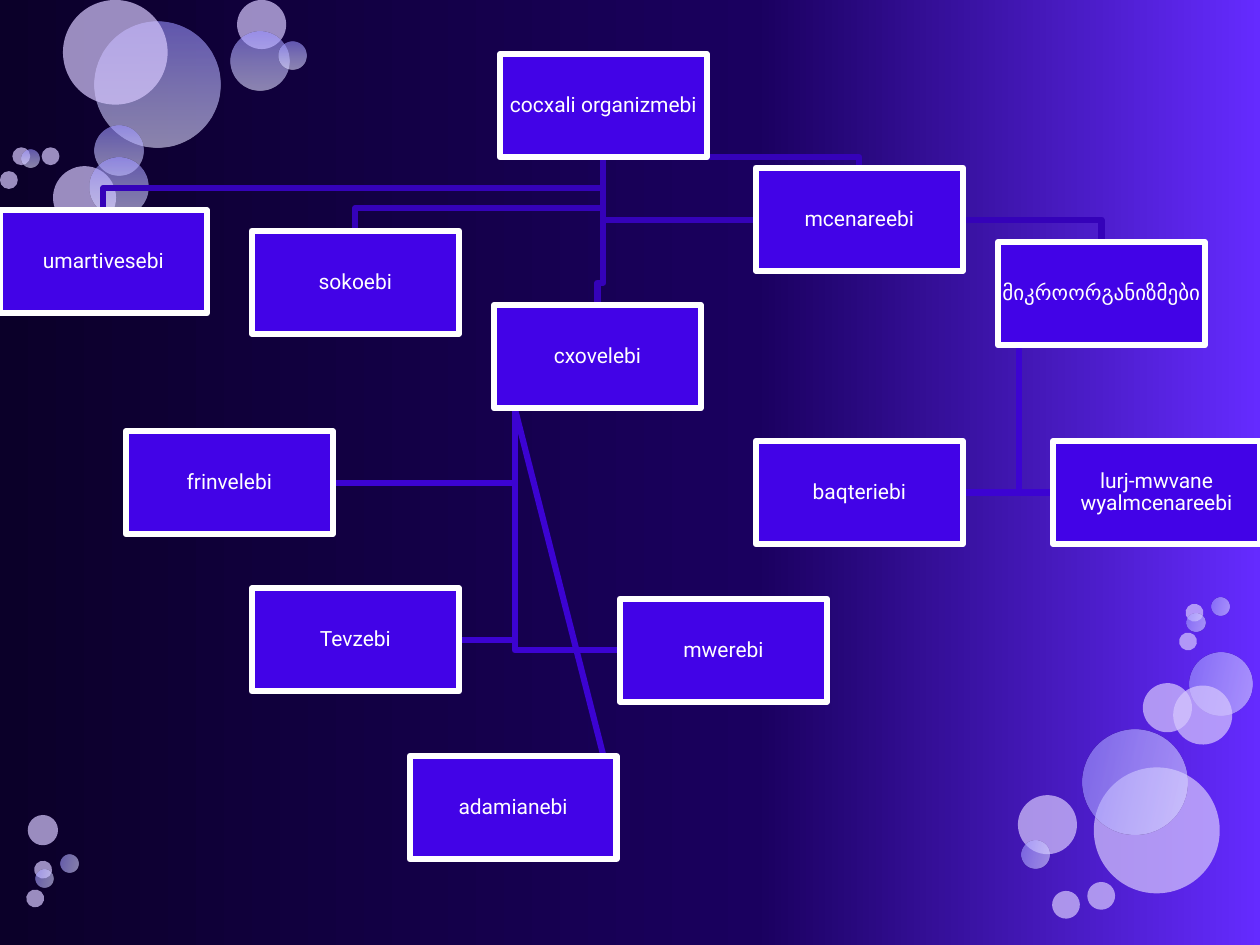
from dataclasses import dataclass

from lxml.etree import SubElement
from pptx import Presentation
from pptx.dml.color import RGBColor
from pptx.enum.shapes import MSO_CONNECTOR, MSO_SHAPE
from pptx.enum.text import MSO_ANCHOR, PP_ALIGN
from pptx.oxml.ns import qn
from pptx.shapes.autoshape import Shape
from pptx.slide import Slide
from pptx.util import Cm, Pt


@dataclass(frozen=True)
class Stop:
    position: int
    color: str
    opacity: int = 100


@dataclass(frozen=True)
class Theme:
    background: tuple = (Stop(0, "0B0029"), Stop(60, "1A005F"), Stop(100, "652BFF"))
    flat_bubble: tuple = (Stop(0, "D7C8FE", 70),)
    glass_bubble: tuple = (Stop(0, "9890FF", 60), Stop(50, "BFBBFF", 60), Stop(100, "E0DEFF", 60))
    box: str = "4203E7"
    white: str = "FFFFFF"
    upper_line: str = "3502B9"
    lower_line: str = "3C03D2"
    line_width: float = 3.5
    text_size: int = 12
    font: str = "Roboto"


@dataclass(frozen=True)
class Bubble:
    left: float
    top: float
    size: float
    glass: bool = False


@dataclass(frozen=True)
class Node:
    text: str
    left: float
    top: float
    font: str = "Roboto"

    @property
    def center(self) -> float:
        return self.left + BOX_WIDTH / 2

    @property
    def middle(self) -> float:
        return self.top + BOX_HEIGHT / 2

    @property
    def bottom(self) -> float:
        return self.top + BOX_HEIGHT

    @property
    def stem(self) -> float:
        """Where the line to side branches leaves the bottom edge."""
        return self.left + BOX_WIDTH / 10


THEME = Theme()
BOX_WIDTH, BOX_HEIGHT = 4.17, 2.08
BEND = 0.45
TILT = 103.3

UPPER_BUBBLES = [
    Bubble(1.91, 0.43, 2.54, True), Bubble(1.07, 3.35, 1.27), Bubble(1.91, 2.54, 0.99, True),
    Bubble(1.8, 3.18, 1.19, True), Bubble(1.27, 0, 2.11), Bubble(4.78, 0, 0.99),
    Bubble(4.65, 0.64, 1.19, True), Bubble(5.61, 0.84, 0.56, True), Bubble(0.25, 2.97, 0.36),
    Bubble(0, 3.45, 0.36), Bubble(0.43, 3.02, 0.36, True), Bubble(0.84, 2.97, 0.36),
]
LOWER_BUBBLES = [
    Bubble(22.05, 15.47, 2.54), Bubble(23.98, 13.16, 1.27, True), Bubble(23.04, 13.77, 0.99),
    Bubble(23.65, 13.82, 1.19), Bubble(21.82, 14.71, 2.11, True), Bubble(0.56, 16.43, 0.61),
    Bubble(20.52, 16.03, 1.19), Bubble(20.6, 16.94, 0.56, True), Bubble(21.21, 17.96, 0.56),
    Bubble(23.9, 12.17, 0.36), Bubble(21.92, 17.78, 0.56), Bubble(24.43, 12.04, 0.36, True),
    Bubble(23.93, 12.37, 0.36, True), Bubble(23.77, 12.75, 0.36), Bubble(0.69, 17.35, 0.36),
    Bubble(1.22, 17.22, 0.36, True), Bubble(0.71, 17.53, 0.36, True), Bubble(0.53, 17.93, 0.36),
]

ORGANISMS = Node("cocxali organizmebi", 10.08, 1.09)
ANIMALS = Node("cxovelebi", 9.96, 6.15)
FISH = Node("Tevzebi", 5.08, 11.86)
BIRDS = Node("frinvelebi", 2.54, 8.69)
INSECTS = Node("mwerebi", 12.5, 12.07)
HUMANS = Node("adamianebi", 8.26, 15.24)
SIMPLEST = Node("umartivesebi", 0, 4.24)
FUNGI = Node("sokoebi", 5.08, 4.65)
PLANTS = Node("mcenareebi", 15.24, 3.38)
MICROBES = Node("მიკროორგანიზმები", 20.12, 4.88, "Comic Neue")
BACTERIA = Node("baqteriebi", 15.24, 8.89)
ALGAE = Node("lurj-mwvane wyalmcenareebi", 21.23, 8.89)

NODES = [ORGANISMS, ANIMALS, FISH, BIRDS, INSECTS, HUMANS,
         SIMPLEST, FUNGI, PLANTS, MICROBES, BACTERIA, ALGAE]
KINGDOMS = [MICROBES, PLANTS, FUNGI, SIMPLEST, ANIMALS]
SIDE_BRANCHES = [(MICROBES, ALGAE), (MICROBES, BACTERIA),
                 (ANIMALS, INSECTS), (ANIMALS, BIRDS), (ANIMALS, FISH)]


def paint(fill, parent, stops: tuple, angle: int = 0) -> None:
    """Fill with one translucent colour, or with a gradient if there are more stops."""
    fill.solid()
    fill.fore_color.rgb = RGBColor.from_string(stops[0].color)
    solid = parent.find(qn("a:solidFill"))
    if len(stops) == 1:
        SubElement(solid[0], qn("a:alpha"), val=str(stops[0].opacity * 1000))
        return
    gradient = parent.makeelement(qn("a:gradFill"), {"rotWithShape": "1"})
    stop_list = SubElement(gradient, qn("a:gsLst"))
    for stop in stops:
        entry = SubElement(stop_list, qn("a:gs"), pos=str(stop.position * 1000))
        color = SubElement(entry, qn("a:srgbClr"), val=stop.color)
        SubElement(color, qn("a:alpha"), val=str(stop.opacity * 1000))
    SubElement(gradient, qn("a:lin"), ang=str(angle * 60000), scaled="0")
    parent.replace(solid, gradient)


def draw_bubble(page: Slide, bubble: Bubble, tilted: bool) -> None:
    shape = page.shapes.add_shape(MSO_SHAPE.OVAL, Cm(bubble.left), Cm(bubble.top),
                                  Cm(bubble.size), Cm(bubble.size))
    shape.shadow.inherit = False
    shape.line.fill.background()
    properties = shape._element.spPr
    paint(shape.fill, properties, THEME.glass_bubble if bubble.glass else THEME.flat_bubble, 90)
    if tilted:
        shape.rotation = TILT
        properties.find(qn("a:xfrm")).set("flipV", "1")


def style_line(line, color: str) -> None:
    line.color.rgb = RGBColor.from_string(color)
    line.width = Pt(THEME.line_width)


def draw_box(page: Slide, node: Node) -> Shape:
    box = page.shapes.add_shape(MSO_SHAPE.RECTANGLE, Cm(node.left), Cm(node.top),
                                Cm(BOX_WIDTH), Cm(BOX_HEIGHT))
    box.shadow.inherit = False
    box.fill.solid()
    box.fill.fore_color.rgb = RGBColor.from_string(THEME.box)
    style_line(box.line, THEME.white)
    frame = box.text_frame
    frame.word_wrap = True
    frame.vertical_anchor = MSO_ANCHOR.MIDDLE
    frame.margin_left = frame.margin_right = frame.margin_top = frame.margin_bottom = Cm(0.02)
    frame.text = node.text
    para = frame.paragraphs[0]
    para.alignment = PP_ALIGN.CENTER
    para.line_spacing = 0.9
    font = para.runs[0].font
    font.name, font.size = node.font, Pt(THEME.text_size)
    font.color.rgb = RGBColor.from_string(THEME.white)
    return box


def draw_route(page: Slide, points: list[tuple[float, float]], color: str) -> None:
    start, *corners = [(Cm(x), Cm(y)) for x, y in points]
    builder = page.shapes.build_freeform(*start)
    builder.add_line_segments(corners, close=False)
    route = builder.convert_to_shape()
    route.shadow.inherit = False
    route.fill.background()
    style_line(route.line, color)


def draw_drop(page: Slide, parent: Node, child: Node) -> None:
    """Line from the parent's bottom to the child's top, bent just above the child."""
    bend = max(parent.bottom, child.top - BEND)
    draw_route(page, [(parent.center, parent.bottom), (parent.center, bend),
                      (child.center, bend), (child.center, child.top)], THEME.upper_line)


def draw_side_branch(page: Slide, parent: Node, child: Node) -> None:
    """Line down the parent's stem and across to the child's nearer side."""
    side = child.left if child.left > parent.stem else child.left + BOX_WIDTH
    draw_route(page, [(parent.stem, parent.bottom), (parent.stem, child.middle),
                      (side, child.middle)], THEME.lower_line)


def draw_slant(page: Slide, parent: Node, child: Node, child_box: Shape) -> None:
    slant = page.shapes.add_connector(MSO_CONNECTOR.STRAIGHT, Cm(parent.stem), Cm(parent.bottom),
                                      Cm(child.left + BOX_WIDTH), Cm(child.middle))
    slant.end_connect(child_box, 3)
    style_line(slant.line, THEME.lower_line)
    SubElement(slant._element.spPr, qn("a:effectLst"))


def main() -> None:
    deck = Presentation()
    deck.slide_width, deck.slide_height = Cm(25.4), Cm(19.05)
    page = deck.slides.add_slide(deck.slide_layouts[6])
    background = page.background.fill
    paint(background, page._element.find(".//" + qn("p:bgPr")), THEME.background)

    for bubbles, tilted in ((UPPER_BUBBLES, False), (LOWER_BUBBLES, True)):
        for bubble in bubbles:
            draw_bubble(page, bubble, tilted)

    boxes = {node: draw_box(page, node) for node in NODES}
    for parent, child in SIDE_BRANCHES:
        draw_side_branch(page, parent, child)
    for kingdom in KINGDOMS:
        draw_drop(page, ORGANISMS, kingdom)
    draw_slant(page, ANIMALS, HUMANS, boxes[HUMANS])
    for box in boxes.values():  # bring the boxes in front of the lines
        page.shapes._spTree.append(box._element)

    deck.save("out.pptx")


if __name__ == "__main__":
    main()
